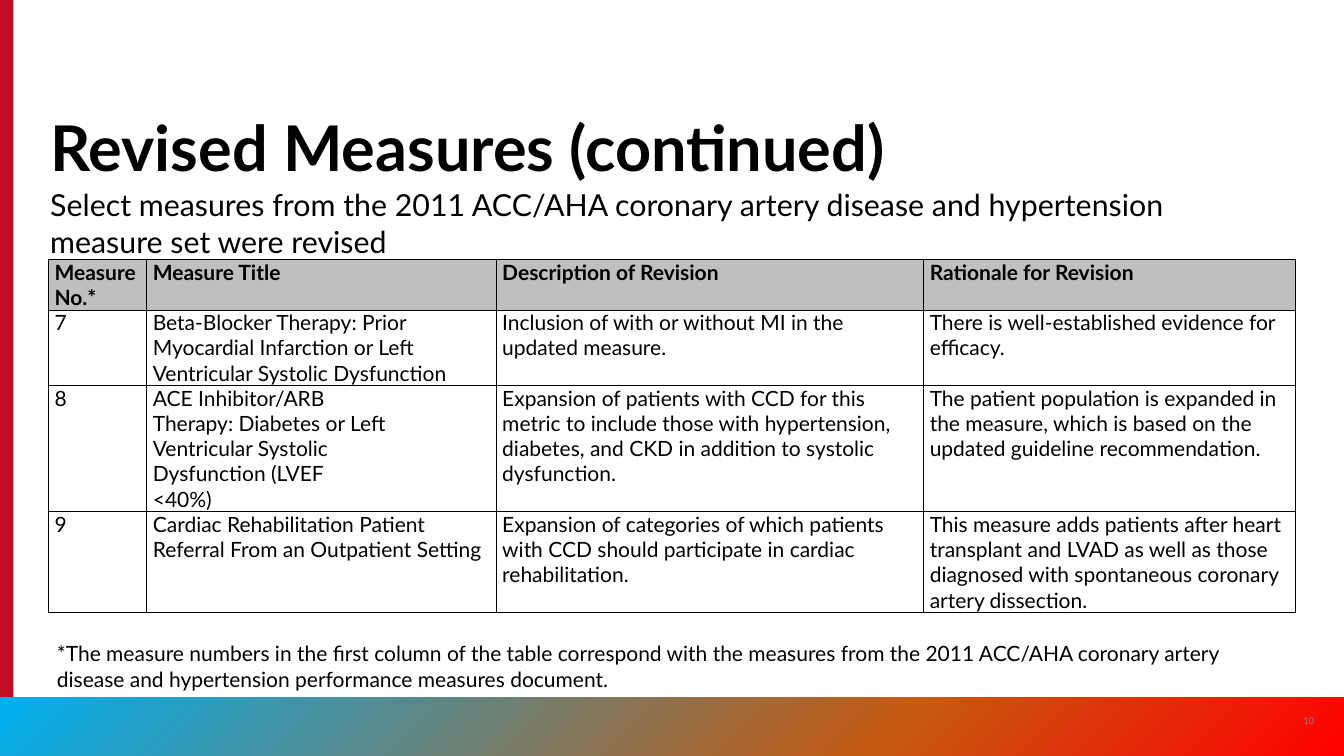
from lxml import etree
from pptx import Presentation
from pptx.dml.color import RGBColor
from pptx.enum.shapes import MSO_SHAPE as SHAPE
from pptx.enum.text import MSO_ANCHOR as ANCHOR, MSO_AUTO_SIZE as FIT, PP_ALIGN as ALIGN
from pptx.oxml import parse_xml
from pptx.oxml.ns import nsdecls, qn
from pptx.util import Inches, Pt

BLACK = RGBColor(0, 0, 0)
GRAY = RGBColor(0x8A, 0x8B, 0x8A)
SILVER = RGBColor(0xBF, 0xBF, 0xBF)
RED = RGBColor(0xC1, 0x0E, 0x21)
STOPS = [(0, "00B0F0"), (66, "C55A11"), (100, "FF0000")]

COLS = [1.17, 4.16, 5.09, 4.42]
ROWS = [0.6, 0.9, 1.5, 1.2]
CELLS = [
    ["Measure\nNo.*", "Measure Title", "Description of Revision",
     "Rationale for Revision"],
    ["7",
     "Beta-Blocker Therapy: Prior Myocardial Infarction or Left "
     "Ventricular Systolic Dysfunction",
     "Inclusion of with or without MI in the updated measure.",
     "There is well-established evidence for efficacy."],
    ["8",
     "ACE Inhibitor/ARB\nTherapy: Diabetes or Left\nVentricular Systolic\n"
     "Dysfunction (LVEF\n<40%)",
     "Expansion of patients with CCD for this metric to include those with "
     "hypertension, diabetes, and CKD in addition to systolic dysfunction.",
     "The patient population is expanded in the measure, which is based on "
     "the updated guideline recommendation."],
    ["9",
     "Cardiac Rehabilitation Patient Referral From an Outpatient Setting",
     "Expansion of categories of which patients with CCD should participate "
     "in cardiac rehabilitation.",
     "This measure adds patients after heart transplant and LVAD as well as "
     "those diagnosed with spontaneous coronary artery dissection."],
]


def write(frame, text, size, color=BLACK, bold=False, align=ALIGN.LEFT):
    frame.text = text
    frame.word_wrap = True
    for para in frame.paragraphs:
        para.alignment = align
        for run in para.runs:
            font = run.font
            font.name = "Lato"
            font.size = Pt(size)
            font.bold = bold
            font.color.rgb = color


def add_bar(left, top, width, height):
    bar = slide.shapes.add_shape(SHAPE.RECTANGLE, Inches(left), Inches(top),
                                 Inches(width), Inches(height))
    bar.shadow.inherit = False
    bar.line.fill.background()
    bar.fill.solid()
    bar.fill.fore_color.rgb = RED
    return bar


prs = Presentation()
prs.slide_width = Inches(16)
prs.slide_height = Inches(9)
slide = prs.slides.add_slide(prs.slide_layouts[5])

# Side bar and footer band
add_bar(0, 0, 0.16, 9)
band = add_bar(0, 8.3, 16, 0.7)
stops = "".join(f'<a:gs pos="{pos * 1000}"><a:srgbClr val="{color}"/></a:gs>'
                for pos, color in STOPS)
solid = band.fill._xPr.find(qn("a:solidFill"))
solid.getparent().replace(solid, parse_xml(
    f'<a:gradFill {nsdecls("a")} rotWithShape="1"><a:gsLst>{stops}</a:gsLst>'
    '<a:lin ang="2700000" scaled="0"/></a:gradFill>'))

# Title
title = slide.shapes.title
title.left, title.top = Inches(0.5), Inches(1.25)
title.width, title.height = Inches(14.08), Inches(1)
write(title.text_frame, "Revised Measures (continued)", 54, bold=True)
title.text_frame.auto_size = FIT.NONE
title.text_frame.vertical_anchor = ANCHOR.BOTTOM
title.text_frame.paragraphs[0].line_spacing = 0.9

# Measures table
table = slide.shapes.add_table(len(ROWS), len(COLS), Inches(0.58), Inches(3.09),
                               Inches(sum(COLS)), Inches(sum(ROWS))).table
table.horz_banding = False
for col, width in zip(table.columns, COLS):
    col.width = Inches(width)
for r, (row, height) in enumerate(zip(table.rows, ROWS)):
    row.height = Inches(height)
    for cell, text in zip(row.cells, CELLS[r]):
        write(cell.text_frame, text, 18, bold=r == 0)
        cell.margin_left = cell.margin_right = Inches(0.07)
        cell.margin_top = cell.margin_bottom = 0
        props = cell._tc.get_or_add_tcPr()
        for side in ("lnL", "lnR", "lnT", "lnB"):
            edge = etree.SubElement(props, qn(f"a:{side}"), w=str(Pt(1)))
            paint = etree.SubElement(edge, qn("a:solidFill"))
            etree.SubElement(paint, qn("a:srgbClr"), val=str(BLACK))
        if r == 0:
            cell.fill.solid()
            cell.fill.fore_color.rgb = SILVER
        else:
            cell.fill.background()

# Subtitle, footnote and slide number
TEXTS = [
    (0.5, 2.17, 14.84, 0.85, 26, BLACK, ALIGN.LEFT, ANCHOR.TOP,
     "Select measures from the 2011 ACC/AHA coronary artery disease and "
     "hypertension measure set were revised"),
    (0.58, 7.58, 14.83, 0.71, 18, BLACK, ALIGN.LEFT, ANCHOR.TOP,
     "*The measure numbers in the first column of the table correspond with "
     "the measures from the 2011 ACC/AHA coronary artery disease and "
     "hypertension performance measures document."),
    (15.34, 8.34, 0.48, 0.48, 8, GRAY, ALIGN.CENTER, ANCHOR.MIDDLE, "10"),
]
for left, top, width, height, size, color, align, anchor, text in TEXTS:
    box = slide.shapes.add_textbox(Inches(left), Inches(top),
                                   Inches(width), Inches(height))
    write(box.text_frame, text, size, color, align=align)
    box.text_frame.vertical_anchor = anchor

prs.save("out.pptx")
